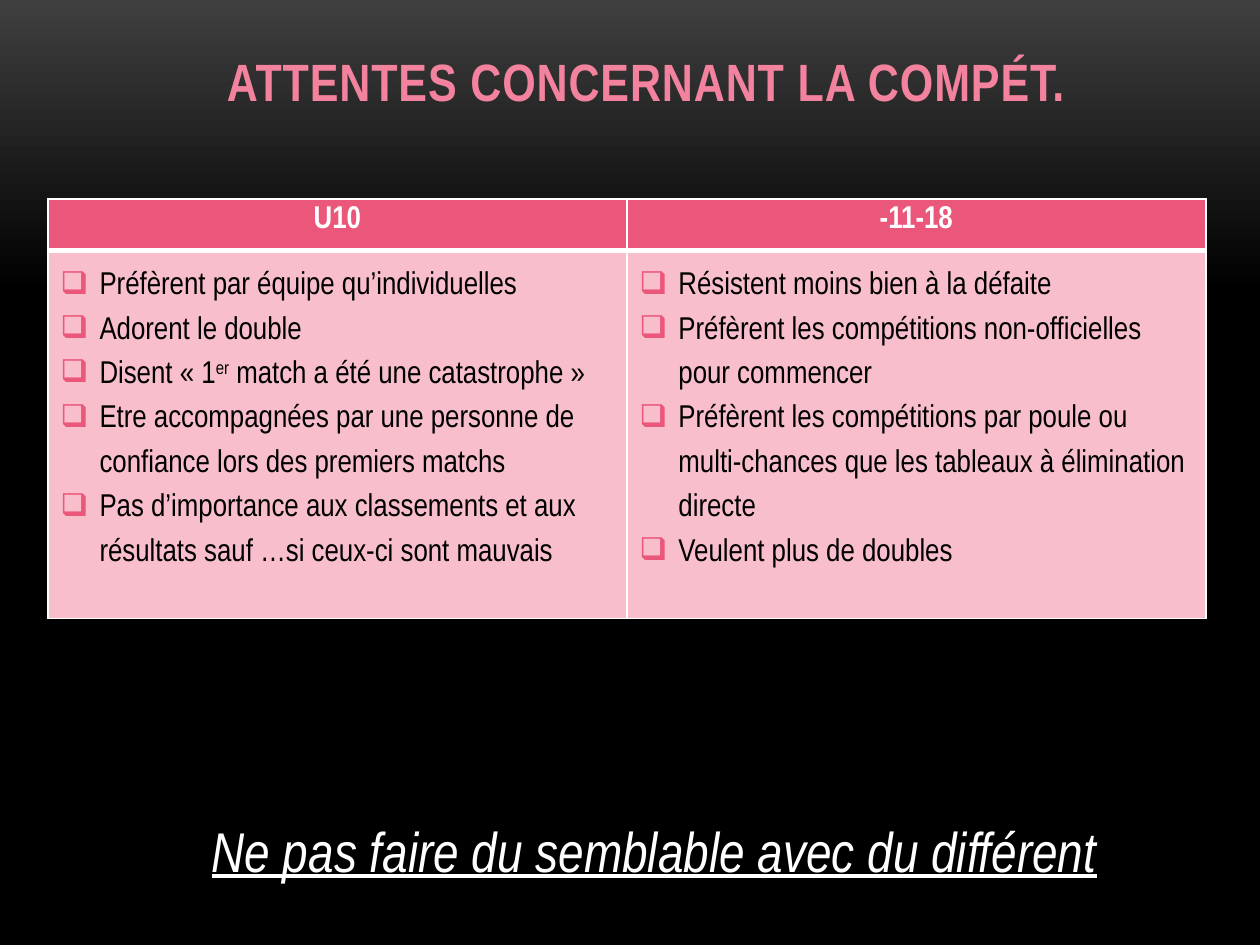
from dataclasses import dataclass

from lxml.etree import SubElement
from pptx import Presentation
from pptx.dml.color import RGBColor as RGB
from pptx.enum.text import MSO_ANCHOR as Anchor, PP_ALIGN as Align
from pptx.oxml.ns import qn
from pptx.util import Inches, Pt


@dataclass(frozen=True)
class Theme:
    font: str = "Arial Narrow"
    white: RGB = RGB(0xFF, 0xFF, 0xFF)
    black: RGB = RGB(0, 0, 0)
    gray: RGB = RGB(0x3F, 0x3F, 0x3F)
    title: RGB = RGB(0xF2, 0x82, 0x9D)
    header: RGB = RGB(0xEB, 0x57, 0x7A)
    body: RGB = RGB(0xF8, 0xBE, 0xCC)
    title_size: Pt = Pt(30)
    table_size: Pt = Pt(18)
    closing_size: Pt = Pt(32)


theme = Theme()

# Each item is a list of text parts; every second part is superscript.
COLUMNS = {
    "U10": [
        ["Préfèrent par équipe qu’individuelles"],
        ["Adorent le double"],
        ["Disent « 1", "er", " match a été une catastrophe »"],
        ["Etre accompagnées par une personne de confiance lors des premiers matchs"],
        ["Pas d’importance aux classements et aux résultats sauf …si ceux-ci sont mauvais"],
    ],
    "-11-18": [
        ["Résistent moins bien à la défaite"],
        ["Préfèrent les compétitions non-officielles pour commencer"],
        ["Préfèrent les compétitions par poule ou multi-chances que les tableaux "
         "à élimination directe"],
        ["Veulent plus de doubles"],
    ],
}


def style_run(run, size, color, bold=False):
    run.font.name = theme.font
    run.font.size = size
    run.font.color.rgb = color
    run.font.bold = bold


def style_cell(cell, fill, top, bottom):
    """Draw the white borders (widths in points), then fill the cell."""
    properties = cell._tc.get_or_add_tcPr()
    for side, width in (("L", 1), ("R", 1), ("T", top), ("B", bottom)):
        line = SubElement(properties, qn(f"a:ln{side}"), w=str(Pt(width)))
        solid = SubElement(line, qn("a:solidFill"))
        SubElement(solid, qn("a:srgbClr"), val=str(theme.white))
    cell.fill.solid()
    cell.fill.fore_color.rgb = fill


presentation = Presentation()
presentation.slide_width, presentation.slide_height = Inches(10), Inches(7.5)
slide = presentation.slides.add_slide(presentation.slide_layouts[5])

background = slide.background.fill
background.gradient()
background.gradient_angle = 270
for stop, position, color in zip(background.gradient_stops, (0, 0.31),
                                 (theme.gray, theme.black)):
    stop.position = position
    stop.color.rgb = color

# Title
title = slide.shapes.title
title.left, title.top = Inches(0.38), Inches(0.29)
title.width, title.height = Inches(9.5), Inches(0.65)
title.text_frame.text = "ATTENTES CONCERNANT LA COMPÉT."
title.text_frame.vertical_anchor = Anchor.BOTTOM
paragraph = title.text_frame.paragraphs[0]
paragraph.alignment = Align.CENTER
style_run(paragraph.runs[0], theme.title_size, theme.title, bold=True)
paragraph.runs[0].font._element.set("spc", "50")

# Comparison table
table = slide.shapes.add_table(2, len(COLUMNS), Inches(0.38), Inches(1.58),
                               Inches(9.19), Inches(3.33)).table
table.rows[0].height, table.rows[1].height = Inches(0.41), Inches(2.92)

for column, (heading, items) in enumerate(COLUMNS.items()):
    header_cell, body_cell = table.cell(0, column), table.cell(1, column)
    style_cell(header_cell, theme.header, top=1, bottom=3)
    style_cell(body_cell, theme.body, top=3, bottom=1)

    header_cell.text_frame.text = heading
    paragraph = header_cell.text_frame.paragraphs[0]
    paragraph.alignment = Align.CENTER
    style_run(paragraph.runs[0], theme.table_size, theme.white, bold=True)

    for index, parts in enumerate(items):
        frame = body_cell.text_frame
        paragraph = frame.add_paragraph() if index else frame.paragraphs[0]
        paragraph.line_spacing = 1.5
        properties = paragraph._p.get_or_add_pPr()
        properties.set("marL", str(Inches(0.31)))
        properties.set("indent", str(-Inches(0.31)))
        bullet_color = SubElement(properties, qn("a:buClr"))
        SubElement(bullet_color, qn("a:srgbClr"), val=str(theme.header))
        SubElement(properties, qn("a:buChar"), char="❑")
        for part_index, part in enumerate(parts):
            run = paragraph.add_run()
            run.text = part
            style_run(run, theme.table_size, theme.black)
            if part_index % 2:
                run.font._element.set("baseline", "30000")

# Closing line
closing = slide.shapes.add_textbox(Inches(1.06), Inches(6.43), Inches(8.27), Inches(0.64))
closing.text_frame.word_wrap = True
closing.text_frame.text = "Ne pas faire du semblable avec du différent"
paragraph = closing.text_frame.paragraphs[0]
paragraph.alignment = Align.CENTER
style_run(paragraph.runs[0], theme.closing_size, theme.white)
paragraph.runs[0].font.italic = True
paragraph.runs[0].font.underline = True

presentation.save("out.pptx")
